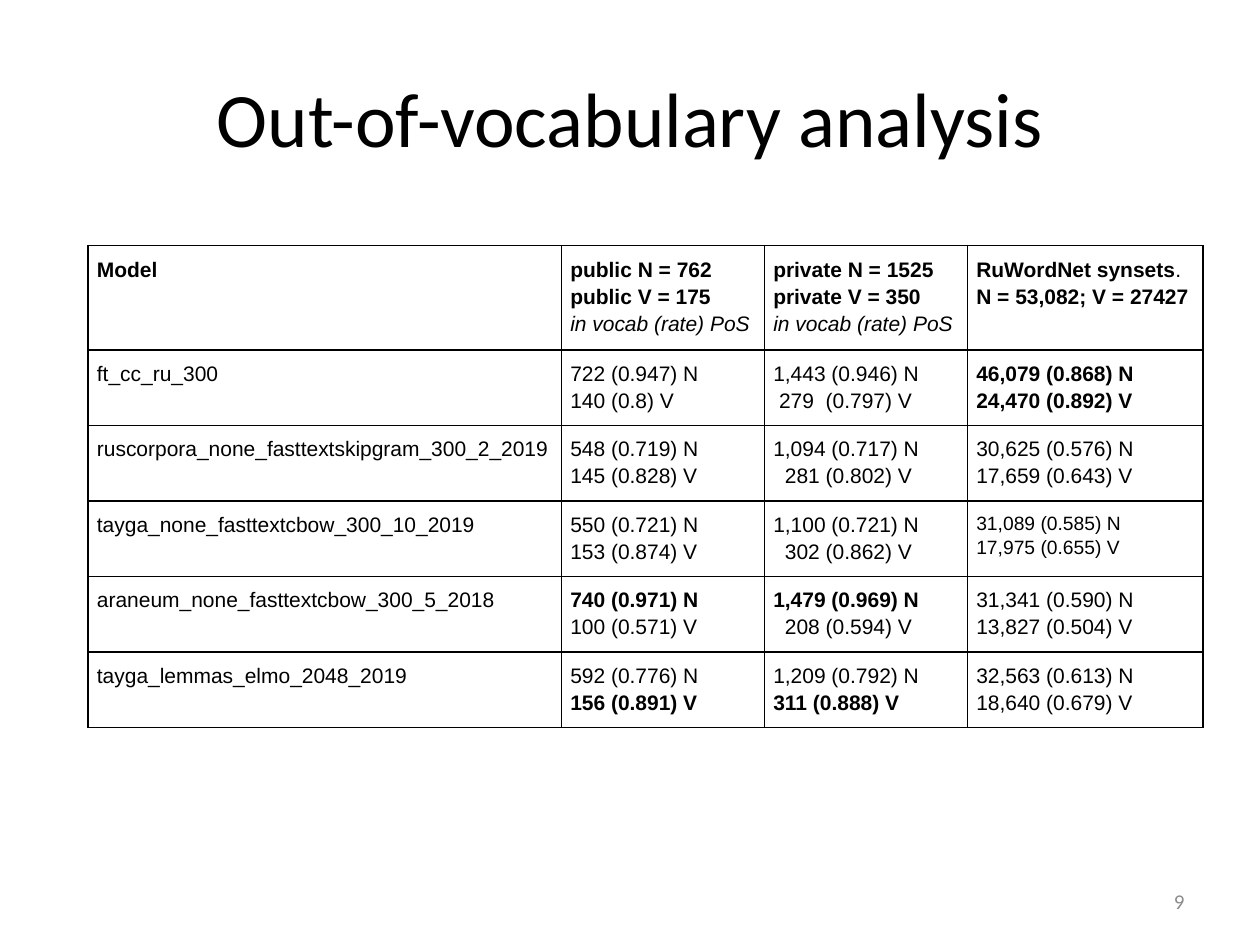
"""Build the out-of-vocabulary analysis slide."""
from dataclasses import dataclass

from lxml import etree
from pptx import Presentation
from pptx.dml.color import RGBColor
from pptx.enum.text import MSO_ANCHOR, PP_ALIGN
from pptx.oxml.ns import qn
from pptx.util import Pt

LEFT, CENTER, RIGHT = PP_ALIGN.LEFT, PP_ALIGN.CENTER, PP_ALIGN.RIGHT
TOP, MIDDLE = MSO_ANCHOR.TOP, MSO_ANCHOR.MIDDLE
BORDER_SIDES = ("a:lnL", "a:lnR", "a:lnT", "a:lnB")


@dataclass(frozen=True)
class Theme:
    ink: str = "000000"
    muted: str = "8C8C8C"
    heading_font: str = "Calibri"
    table_font: str = "Arial"
    title_size: float = 44
    body_size: float = 12
    small_size: float = 11
    border_width: float = 1
    cell_inset: float = 5
    line_spacing: float = 1.15


@dataclass(frozen=True)
class Span:
    text: str
    bold: bool = False
    italic: bool = False
    small: bool = False


@dataclass(frozen=True)
class Para:
    spans: tuple
    indent: float = 0


def plain(text, indent=0):
    return Para((Span(text),), indent)


def bold(text):
    return Para((Span(text, bold=True),))


def italic(text):
    return Para((Span(text, italic=True),))


def small(text):
    return Para((Span(text, small=True),))


class SlideBuilder:
    def __init__(self, page, theme):
        self.page = page
        self.theme = theme

    def add_span(self, para, span, font, size, color):
        run = para.add_run()
        run.text = span.text
        run.font.name = font
        run.font.size = Pt(size)
        run.font.bold = span.bold
        run.font.italic = span.italic
        run.font.color.rgb = RGBColor.from_string(color)

    def text(self, words, left, top, width, height, size, color, align):
        box = self.page.shapes.add_textbox(Pt(left), Pt(top), Pt(width), Pt(height))
        frame = box.text_frame
        frame.word_wrap = True
        frame.vertical_anchor = MIDDLE
        para = frame.paragraphs[0]
        para.alignment = align
        self.add_span(para, Span(words), self.theme.heading_font, size, color)

    def table(self, rows, left, top, widths, heights):
        frame = self.page.shapes.add_table(
            len(rows), len(widths), Pt(left), Pt(top), Pt(sum(widths)), Pt(sum(heights)))
        table = frame.table
        table.first_row = False
        table.horz_banding = False
        for column, width in zip(table.columns, widths):
            column.width = Pt(width)
        for row, height, contents in zip(table.rows, heights, rows):
            row.height = Pt(height)
            for cell, paras in zip(row.cells, contents):
                self.fill_cell(cell, paras)

    def fill_cell(self, cell, paras):
        theme = self.theme
        inset = Pt(theme.cell_inset)
        cell.margin_left = cell.margin_right = inset
        cell.margin_top = cell.margin_bottom = inset
        cell.vertical_anchor = TOP
        cell.fill.background()
        self.add_borders(cell)
        frame = cell.text_frame
        for index, content in enumerate(paras):
            para = frame.add_paragraph() if index else frame.paragraphs[0]
            para.alignment = LEFT
            para.line_spacing = theme.line_spacing
            if content.indent:
                para._p.get_or_add_pPr().set("marL", str(Pt(content.indent)))
            for span in content.spans:
                size = theme.small_size if span.small else theme.body_size
                self.add_span(para, span, theme.table_font, size, theme.ink)

    def add_borders(self, cell):
        properties = cell._tc.get_or_add_tcPr()
        for position, side in enumerate(BORDER_SIDES):
            line = etree.Element(qn(side), w=str(Pt(self.theme.border_width)))
            fill = etree.SubElement(line, qn("a:solidFill"))
            etree.SubElement(fill, qn("a:srgbClr"), val=self.theme.ink)
            properties.insert(position, line)


RATE_NOTE = "in vocab (rate) PoS"
SPACE = 3.33

ROWS = [
    [[bold("Model")],
     [bold("public N = 762"), bold("public V = 175"), italic(RATE_NOTE)],
     [bold("private N = 1525"), bold("private V = 350"), italic(RATE_NOTE)],
     [Para((Span("RuWordNet synsets", bold=True), Span("."))),
      bold("N = 53,082; V = 27427")]],
    [[plain("ft_cc_ru_300")],
     [plain("722 (0.947) N"), plain("140 (0.8) V")],
     [plain("1,443 (0.946) N"), plain("279  (0.797) V", SPACE)],
     [bold("46,079 (0.868) N"), bold("24,470 (0.892) V")]],
    [[plain("ruscorpora_none_fasttextskipgram_300_2_2019")],
     [plain("548 (0.719) N"), plain("145 (0.828) V")],
     [plain("1,094 (0.717) N"), plain("281 (0.802) V", 2 * SPACE)],
     [plain("30,625 (0.576) N"), plain("17,659 (0.643) V")]],
    [[plain("tayga_none_fasttextcbow_300_10_2019")],
     [plain("550 (0.721) N"), plain("153 (0.874) V")],
     [plain("1,100 (0.721) N"), plain("302 (0.862) V", 2 * SPACE)],
     [small("31,089 (0.585) N"), small("17,975 (0.655) V")]],
    [[plain("araneum_none_fasttextcbow_300_5_2018")],
     [bold("740 (0.971) N"), plain("100 (0.571) V")],
     [bold("1,479 (0.969) N"), plain("208 (0.594) V", 2 * SPACE)],
     [plain("31,341 (0.590) N"), plain("13,827 (0.504) V")]],
    [[plain("tayga_lemmas_elmo_2048_2019")],
     [plain("592 (0.776) N"), bold("156 (0.891) V")],
     [plain("1,209 (0.792) N"), bold("311 (0.888) V")],
     [plain("32,563 (0.613) N"), plain("18,640 (0.679) V")]],
]


def main():
    deck = Presentation()
    deck.slide_width, deck.slide_height = Pt(720), Pt(540)
    theme = Theme()
    builder = SlideBuilder(deck.slides.add_slide(deck.slide_layouts[6]), theme)
    builder.text("Out-of-vocabulary analysis", 36, 21.6, 648, 90,
                 theme.title_size, theme.ink, CENTER)
    builder.table(ROWS, 50.4, 140.4, [270.5, 116, 116, 134.5],
                  [56.4] + [40.9] * (len(ROWS) - 1))
    builder.text("9", 516, 500.5, 168, 28.8, theme.body_size, theme.muted, RIGHT)
    deck.save("out.pptx")


if __name__ == "__main__":
    main()
